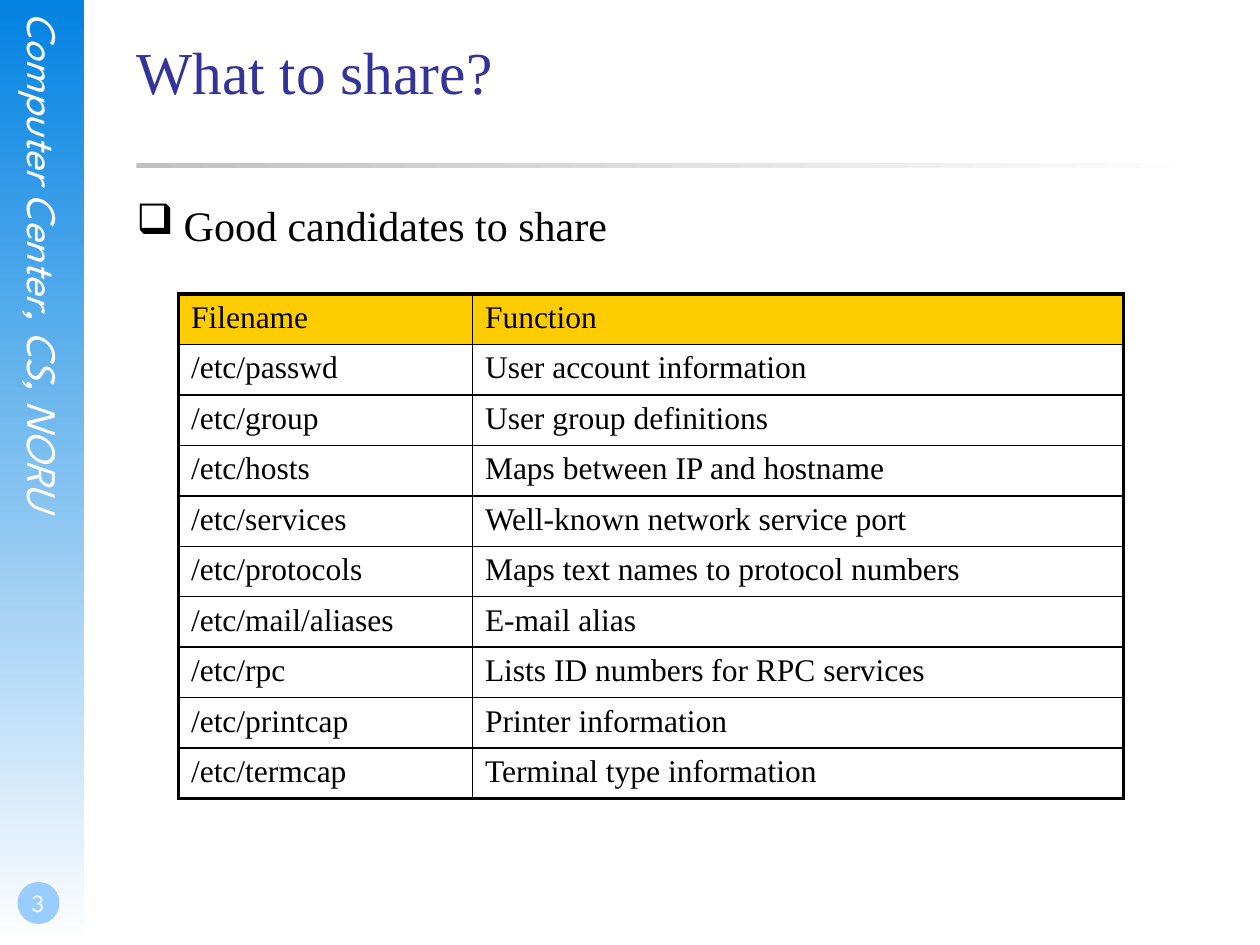
from lxml.etree import SubElement as Sub
from pptx import Presentation
from pptx.dml.color import RGBColor as RGB
from pptx.enum.shapes import MSO_SHAPE as SHAPE
from pptx.enum.text import MSO_ANCHOR as ANCHOR, PP_ALIGN as ALIGN
from pptx.oxml.ns import qn
from pptx.util import Pt

HUES = {"blue": "0282E2", "sky": "99CCFF", "white": "FFFFFF", "grey": "C0C0C0",
        "navy": "333399", "gold": "FFCC00", "black": "000000"}
SERIF = "Times New Roman"
SANS = "League Spartan"
FILES = [
    ("Filename", "Function"),
    ("/etc/passwd", "User account information"),
    ("/etc/group", "User group definitions"),
    ("/etc/hosts", "Maps between IP and hostname"),
    ("/etc/services", "Well-known network service port"),
    ("/etc/protocols", "Maps text names to protocol numbers"),
    ("/etc/mail/aliases", "E-mail alias"),
    ("/etc/rpc", "Lists ID numbers for RPC services"),
    ("/etc/printcap", "Printer information"),
    ("/etc/termcap", "Terminal type information"),
]


class Deck:
    """Holds the style and the current slide."""

    def __init__(self, wide, high):
        self.prs = Presentation()
        self.prs.slide_width, self.prs.slide_height = Pt(wide), Pt(high)
        self.slide = self.prs.slides.add_slide(self.prs.slide_layouts[6])

    def hue(self, name):
        return RGB.from_string(HUES[name])

    def style(self, para, size, hue, face, slant=False):
        for run in para.runs:
            font = run.font
            font.size, font.name, font.italic = Pt(size), face, slant
            font.color.rgb = self.hue(hue)

    def shape(self, kind, box, hues, angle=0):
        item = self.slide.shapes.add_shape(kind, *map(Pt, box))
        item.shadow.inherit = False
        item.line.fill.background()
        if len(hues) == 1:
            item.fill.solid()
            item.fill.fore_color.rgb = self.hue(hues[0])
            return
        item.fill.gradient()
        item.fill.gradient_angle = angle
        for stop, name in zip(item.fill.gradient_stops, hues):
            stop.color.rgb = self.hue(name)

    def text(self, words, box, size, hue, face, slant=False, pads=(0, 0, 0, 0)):
        item = self.slide.shapes.add_textbox(*map(Pt, box))
        frame = item.text_frame
        frame.word_wrap = True
        frame.margin_left, frame.margin_top, frame.margin_right, frame.margin_bottom = map(Pt, pads)
        frame.text = words
        self.style(frame.paragraphs[0], size, hue, face, slant)
        return frame

    def upright(self, words, box, size, hue, face):
        self.text(words, box, size, hue, face, True)
        self.slide.shapes[-1]._element.txBody.bodyPr.set("vert", "eaVert")

    def badge(self, words, box, size, hue, face):
        frame = self.text(words, box, size, hue, face, pads=(1.5, 0, 0, 3.6))
        frame.vertical_anchor = ANCHOR.BOTTOM
        frame.paragraphs[0].alignment = ALIGN.CENTER

    def bullet(self, words, box, size, hue, face, mark, dent):
        para = self.text(words, box, size, hue, face).paragraphs[0]
        para.space_before = Pt(size / 4)
        props = para._p.get_or_add_pPr()
        props.set("marL", str(Pt(dent)))
        props.set("indent", str(-Pt(dent)))
        Sub(props, qn("a:buChar"), char=mark)

    def edge(self, cell, sides):
        props = cell._tc.get_or_add_tcPr()
        for spot, (side, thick) in enumerate(sides.items()):
            line = props.makeelement(qn("a:ln" + side), {"w": str(Pt(thick))})
            fill = Sub(line, qn("a:solidFill"))
            Sub(fill, qn("a:srgbClr"), val=HUES["black"])
            props.insert(spot, line)

    def table(self, data, spot, wides, highs, size):
        rows, cols = len(data), len(wides)
        box = (*spot, sum(wides), sum(highs))
        grid = self.slide.shapes.add_table(rows, cols, *map(Pt, box)).table
        grid.horz_banding = False
        for col, wide in zip(grid.columns, wides):
            col.width = Pt(wide)
        for r, (row, high) in enumerate(zip(data, highs)):
            grid.rows[r].height = Pt(high)
            for c, words in enumerate(row):
                cell = grid.cell(r, c)
                cell.text_frame.text = words
                self.style(cell.text_frame.paragraphs[0], size, "black", SERIF)
                if r == 0:
                    cell.fill.solid()
                    cell.fill.fore_color.rgb = self.hue("gold")
                else:
                    cell.fill.background()
                outer = {"L": c == 0, "R": c == cols - 1, "T": r == 0, "B": r == rows - 1}
                self.edge(cell, {side: 2.25 if out else 1 for side, out in outer.items()})


def main():
    deck = Deck(720, 540)
    deck.shape(SHAPE.RECTANGLE, (0, 0, 48, 540), ("blue", "white"), 270)
    deck.upright("Computer Center, CS, NORU", (10.8, 7.2, 28.8, 368), 24, "white", SANS)
    deck.shape(SHAPE.OVAL, (10, 504, 24, 24), ("sky",))
    deck.badge("3", (0, 492, 42, 36), 14, "white", SANS)
    deck.shape(SHAPE.RECTANGLE, (78, 93, 612, 3), ("grey", "white"))
    deck.text("What to share?", (78, 20, 612, 90), 34, "navy", SERIF)
    deck.bullet("Good candidates to share", (78, 114, 612, 366), 24, "black", SERIF, "❑", 27)
    deck.table(FILES, (102, 168), (168, 372), [27.2] * 4 + [28.8] * 5 + [27.2], 18)
    deck.prs.save("out.pptx")


if __name__ == "__main__":
    main()
